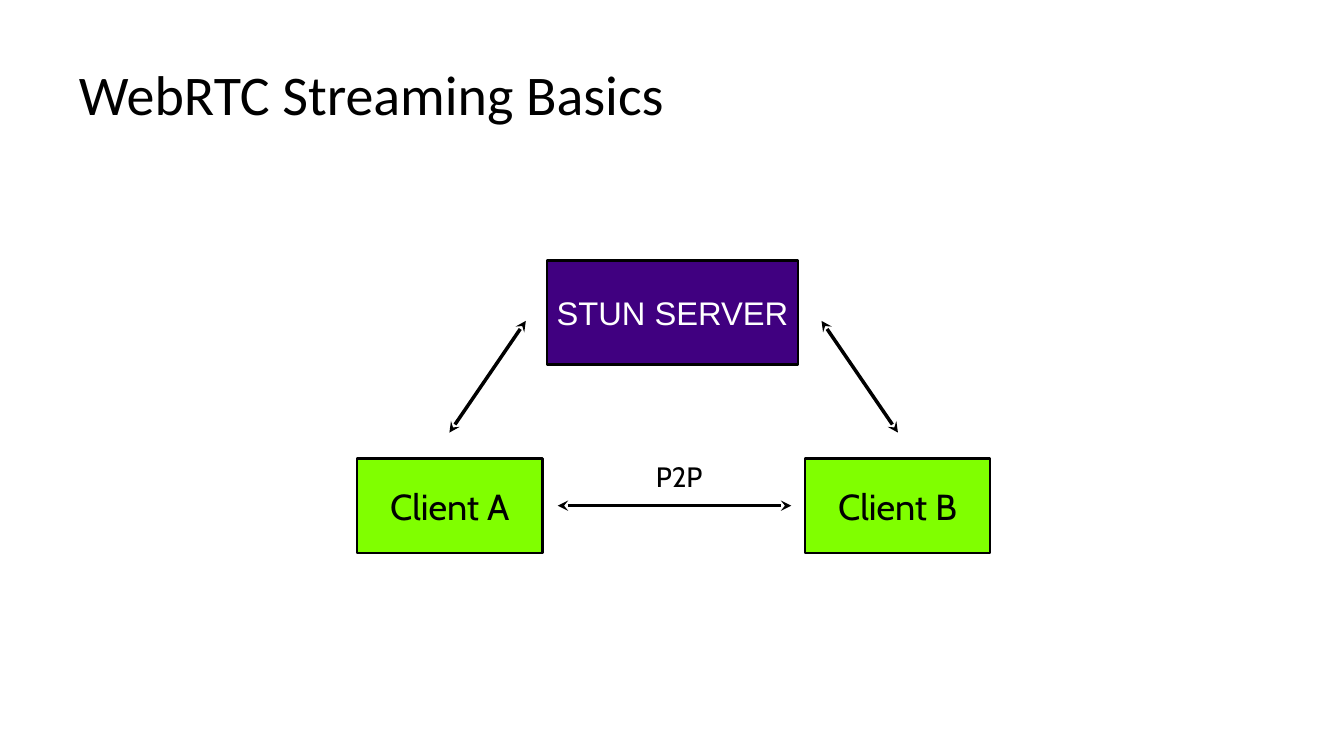
"""Build the WebRTC streaming basics slide: a STUN server above two linked clients."""
import pptx
import pptx.util
import pptx.dml.color
import pptx.enum.shapes
import pptx.enum.text
import pptx.oxml.ns
import lxml.etree

deck = pptx.Presentation()
deck.slide_width = pptx.util.Inches(16)
deck.slide_height = pptx.util.Inches(9)
col, row = deck.slide_width // 16, deck.slide_height // 9
slide = deck.slides.add_slide(deck.slide_layouts[5])
shapes = slide.shapes


def tint(code):
    return pptx.dml.color.RGBColor.from_string(code)


def write(shape, text, size, font, color="000000", align="CENTER", pad=(0, 0), wrap=False):
    frame = shape.text_frame
    frame.word_wrap = wrap
    frame.vertical_anchor = pptx.enum.text.MSO_ANCHOR.MIDDLE
    frame.margin_left = frame.margin_right = int(pad[0] * col)
    frame.margin_top = frame.margin_bottom = int(pad[1] * row)
    if not wrap:
        frame.auto_size = pptx.enum.text.MSO_AUTO_SIZE.SHAPE_TO_FIT_TEXT
    line = frame.paragraphs[0]
    line.alignment = pptx.enum.text.PP_ALIGN[align]
    run = line.add_run()
    run.text = text
    run.font.size = pptx.util.Pt(size)
    run.font.name = font
    run.font.color.rgb = tint(color)


title = shapes.title
title.left, title.top = int(0.8 * col), int(0.36 * row)
title.width, title.height = int(11.53 * col), int(1.5 * row)
write(title, "WebRTC Streaming Basics", 48, "Calibri", align="LEFT", pad=(0.14, 0.07), wrap=True)

client = dict(size=31, font="Cabin")
server = dict(size=28, font="Arial", color="FFFFFF")
nodes = [
    ("Client A", 4.25, 5.46, 2.21, 1.12, "80FF00", 1.55, 0.54, client),
    ("STUN SERVER", 6.51, 3.1, 2.99, 1.24, "400080", 2.78, 0.43, server),
    ("Client B", 9.58, 5.46, 2.21, 1.12, "80FF00", 1.55, 0.54, client),
]
for name, x, y, w, h, fill, wide, high, look in nodes:
    box = shapes.add_shape(pptx.enum.shapes.MSO_SHAPE.RECTANGLE,
                           int(x * col), int(y * row), int(w * col), int(h * row))
    box.shadow.inherit = False
    box.fill.solid()
    box.fill.fore_color.rgb = tint(fill)
    box.line.color.rgb = tint("000000")
    box.line.width = pptx.util.Pt(2)
    label = shapes.add_textbox(int((x + (w - wide) / 2) * col), int((y + (h - high) / 2) * row),
                               int(wide * col), int(high * row))
    write(label, name, **look)

links = [(10.69, 5.15, 9.78, 3.82), (5.35, 5.15, 6.26, 3.82), (6.64, 6.02, 9.42, 6.02)]
for x1, y1, x2, y2 in links:
    link = shapes.add_connector(pptx.enum.shapes.MSO_CONNECTOR.STRAIGHT,
                                int(x1 * col), int(y1 * row), int(x2 * col), int(y2 * row))
    link.line.color.rgb = tint("000000")
    link.line.width = pptx.util.Pt(3)
    stroke = link.line._get_or_add_ln()
    for end in ("a:headEnd", "a:tailEnd"):
        lxml.etree.SubElement(stroke, pptx.oxml.ns.qn(end), type="stealth")
    lxml.etree.SubElement(link._element.spPr, pptx.oxml.ns.qn("a:effectLst"))

note = shapes.add_textbox(int(7.77 * col), int(5.45 * row), int(0.63 * col), int(0.45 * row))
write(note, "P2P", 24, "Cabin")

deck.save("out.pptx")
